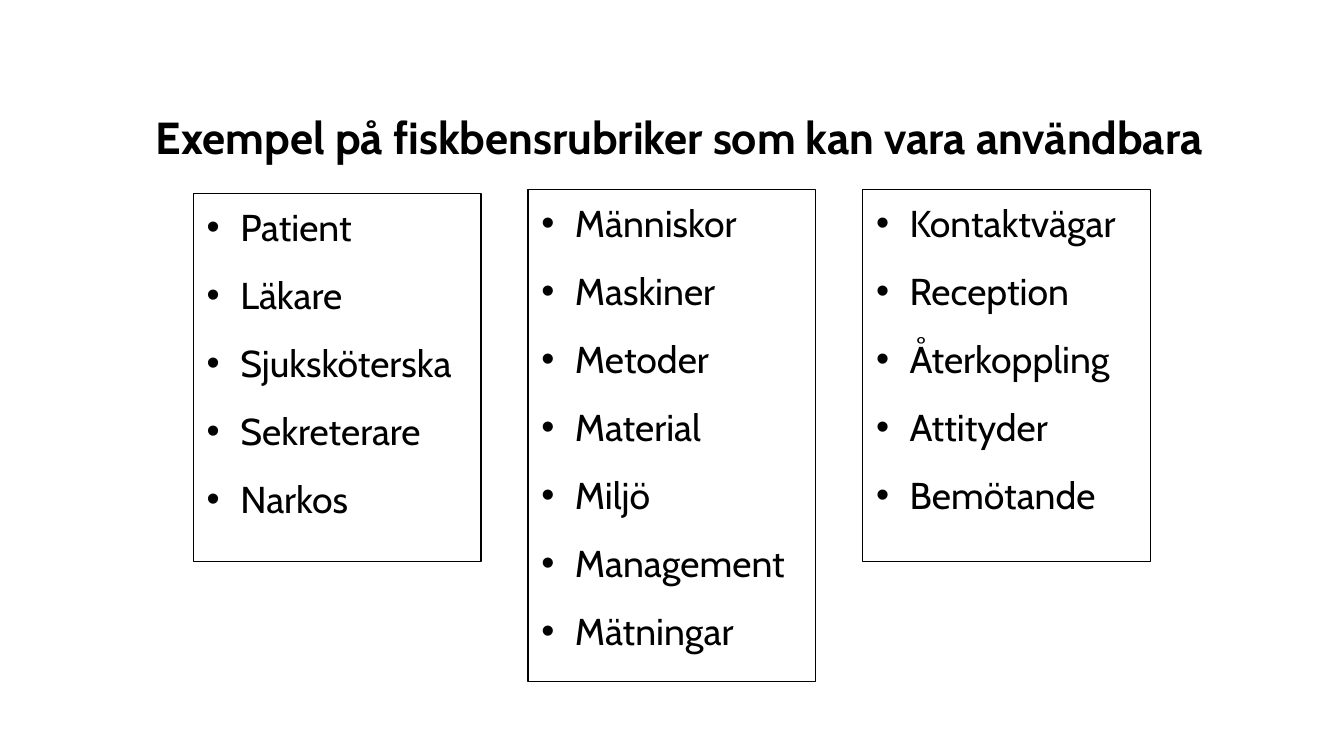
from lxml import etree
from pptx import Presentation
from pptx import util as u
from pptx.dml.color import RGBColor
from pptx.enum import text
from pptx.oxml.ns import qn

BLACK = RGBColor(0, 0, 0)
FONT = "Cabin"


def write(para, words, size, bold=False, spacing=1.0, before=0, bullet=None):
    para.alignment = text.PP_ALIGN.LEFT
    para.line_spacing = spacing
    para.space_before = u.Pt(before)
    if bullet:
        properties = para._p.get_or_add_pPr()
        properties.set("marL", str(u.Inches(0.25)))
        properties.set("indent", str(u.Inches(-0.25)))
        etree.SubElement(properties, qn("a:buFont")).set("typeface", "Arial")
        etree.SubElement(properties, qn("a:buChar")).set("char", bullet)
    span = para.add_run()
    span.text = words
    span.font.name = FONT
    span.font.size = u.Pt(size)
    span.font.bold = bold
    span.font.color.rgb = BLACK


deck = Presentation()
deck.slide_width = u.Inches(10)
deck.slide_height = deck.slide_width * 9 // 16
page = deck.slides.add_slide(deck.slide_layouts[5])

title = page.shapes.title
title.left, title.top = u.Inches(1.06), u.Inches(0.81)
title.width, title.height = u.Inches(8.59), u.Inches(0.56)
title.text_frame.vertical_anchor = text.MSO_ANCHOR.TOP
title.text_frame.auto_size = text.MSO_AUTO_SIZE.NONE
write(title.text_frame.paragraphs[0],
      "Exempel på fiskbensrubriker som kan vara användbara",
      size=24, bold=True, spacing=0.9)

# Each column: top, height, headings
columns = [
    (1.44, 2.74, ["Patient", "Läkare", "Sjuksköterska", "Sekreterare", "Narkos"]),
    (1.41, 3.66, ["Människor", "Maskiner", "Metoder", "Material", "Miljö",
                  "Management", "Mätningar"]),
    (1.41, 2.77, ["Kontaktvägar", "Reception", "Återkoppling", "Attityder",
                  "Bemötande"]),
]
for column, (top, height, headings) in enumerate(columns):
    box = page.shapes.add_textbox(u.Inches(1.44 + 2.49 * column), u.Inches(top),
                                  u.Inches(2.14), u.Inches(height))
    box.line.color.rgb = BLACK
    box.line.width = u.Pt(0.75)
    frame = box.text_frame
    frame.word_wrap = True
    for row, heading in enumerate(headings):
        para = frame.add_paragraph() if row else frame.paragraphs[0]
        write(para, heading, size=20, spacing=1.1, before=10 if row else 0, bullet="•")

deck.save("out.pptx")
